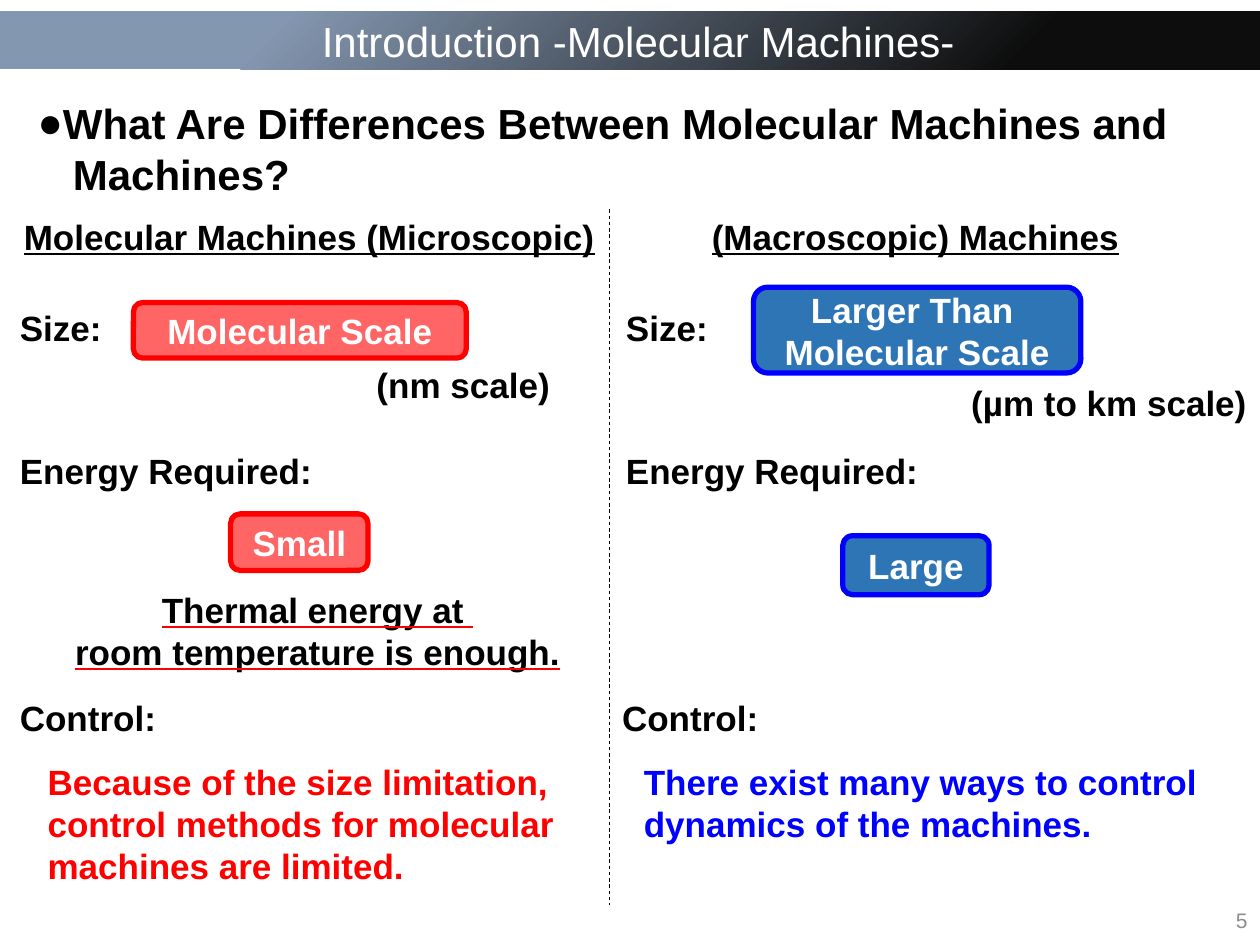
from dataclasses import dataclass

from lxml.etree import SubElement
from pptx import Presentation
from pptx.dml.color import RGBColor
from pptx.enum.dml import MSO_LINE
from pptx.enum.shapes import MSO_CONNECTOR, MSO_SHAPE
from pptx.enum.text import MSO_ANCHOR, PP_ALIGN
from pptx.oxml.ns import qn
from pptx.util import Cm, Pt

FONT = "Arial"
BLACK, WHITE, GREY = "000000", "FFFFFF", "8C8C8C"
RED, BLUE = "FF0000", "0000FF"
LABELS_TOP = {"Size:": 1.83, "Energy Required:": 4.72, "Control:": 9.7}


@dataclass
class Column:
    heading: str
    heading_box: tuple
    accent: str
    chip_fill: str
    chips: list
    scale: str
    scale_box: tuple
    control: str
    control_box: tuple
    control_label_left: float = 0


MICROSCOPIC = Column(
    "Molecular Machines (Microscopic)", (0.08, 0, 12.09, 1.12), RED, "FF6565",
    [(["Molecular Scale"], (2.54, 1.88, 6.71, 1.12)),
     (["Small"], (4.5, 6.14, 2.77, 1.14))],
    "(nm scale)", (7.19, 2.99, 4.04, 1.12),
    "Because of the size limitation, control methods for molecular machines are limited.",
    (0.56, 10.99, 12.65, 2.82))

MACROSCOPIC = Column(
    "(Macroscopic) Machines", (1.73, 0, 10.26, 1.12), BLUE, "2E75B6",
    [(["Larger Than ", "Molecular Scale"], (2.82, 1.57, 6.6, 1.73)),
     (["Large"], (4.62, 6.58, 2.95, 1.19))],
    "(µm to km scale)", (6.96, 3.35, 6.1, 1.12),
    "There exist many ways to control dynamics of the machines.",
    (0.36, 10.99, 12.65, 1.96), -0.08)


def color(value):
    return RGBColor.from_string(value)


def place(origin, box):
    left, top, width, height = box
    return Cm(origin[0] + left), Cm(origin[1] + top), Cm(width), Cm(height)


def write(frame, lines, size=20, fill=BLACK, bold=True, underline=None, align=PP_ALIGN.LEFT):
    for index, line in enumerate(lines):
        para = frame.paragraphs[0] if index == 0 else frame.add_paragraph()
        para.text = line
        para.alignment = align
        font = para.font
        font.name, font.size, font.bold, font.underline = FONT, Pt(size), bold, underline
        font.color.rgb = color(fill)


def add_text(page, origin, box, lines, wrap=True, **style):
    frame = page.shapes.add_textbox(*place(origin, box)).text_frame
    frame.word_wrap = wrap
    write(frame, lines, **style)
    return frame


def add_title_bar(page, box):
    bar = page.shapes.add_shape(MSO_SHAPE.RECTANGLE, *place((0, 0), box))
    bar.shadow.inherit = False
    bar.line.fill.background()
    bar.fill.gradient()
    bar.fill.gradient_angle = 315
    stops = [(0.22, "8497B0"), (0.81, "0D0D0D")]
    for stop, (position, value) in zip(bar.fill.gradient_stops, stops):
        stop.position = position
        stop.color.rgb = color(value)
    frame = bar.text_frame
    frame.margin_left, frame.margin_top, frame.margin_bottom = Cm(0.6), 0, 0
    frame.vertical_anchor = MSO_ANCHOR.MIDDLE
    write(frame, ["Introduction -Molecular Machines-"], 24, WHITE, False, align=PP_ALIGN.CENTER)


def add_question(page, box):
    frame = add_text(page, (0, 0), box, [])
    lines = ["What Are Differences Between Molecular Machines and", "Machines?"]
    first = frame.paragraphs[0]._p.get_or_add_pPr()
    first.set("marL", "0")
    first.set("indent", "0")
    SubElement(first, qn("a:buFont"), typeface=FONT)
    SubElement(first, qn("a:buChar"), char="●")
    write(frame, lines, 24)
    frame.paragraphs[1]._p.get_or_add_pPr().set("marL", str(Cm(0.71)))


def add_chip(page, origin, box, lines, fill, outline):
    chip = page.shapes.add_shape(MSO_SHAPE.ROUNDED_RECTANGLE, *place(origin, box))
    chip.shadow.inherit = False
    chip.fill.solid()
    chip.fill.fore_color.rgb = color(fill)
    chip.line.color.rgb = color(outline)
    chip.line.width = Pt(3)
    chip.text_frame.vertical_anchor = MSO_ANCHOR.MIDDLE
    write(chip.text_frame, lines, fill=WHITE, align=PP_ALIGN.CENTER)


def add_column(page, origin, column):
    add_text(page, origin, column.heading_box, [column.heading], False, underline=True)
    for label, top in LABELS_TOP.items():
        left = column.control_label_left if label == "Control:" else 0
        add_text(page, origin, (left, top, 6.45, 1.12), [label], False)
    for lines, box in column.chips:
        add_chip(page, origin, box, lines, column.chip_fill, column.accent)
    add_text(page, origin, column.scale_box, [column.scale], False)
    add_text(page, origin, column.control_box, [column.control], fill=column.accent)


def add_energy_note(page, origin, box):
    lines = ["Thermal energy at ", "room temperature is enough."]
    frame = add_text(page, origin, box, lines, underline=True, align=PP_ALIGN.CENTER)
    for para in frame.paragraphs:
        for span in para.runs:
            span.font.underline = True
            line_fill = SubElement(span._r.get_or_add_rPr(), qn("a:uFill"))
            solid = SubElement(line_fill, qn("a:solidFill"))
            SubElement(solid, qn("a:srgbClr"), val=RED)


def add_divider(page, left, top, bottom):
    divider = page.shapes.add_connector(
        MSO_CONNECTOR.STRAIGHT, Cm(left), Cm(top), Cm(left), Cm(bottom))
    divider.line.color.rgb = color(BLACK)
    divider.line.width = Pt(0.5)
    divider.line.dash_style = MSO_LINE.DASH
    SubElement(divider._element.spPr, qn("a:effectLst"))


def add_page_number(page, box):
    frame = add_text(page, (0, 0), box, ["5"], size=12, fill=GREY, bold=False,
                     align=PP_ALIGN.RIGHT)
    frame.vertical_anchor = MSO_ANCHOR.MIDDLE


def main():
    deck = Presentation()
    deck.slide_width, deck.slide_height = Cm(25.4), Cm(19.05)
    page = deck.slides.add_slide(deck.slide_layouts[6])
    add_title_bar(page, (-0.02, 0.23, 25.42, 1.17))
    add_question(page, (0.51, 1.85, 24.46, 2.31))
    add_column(page, (0.15, 4.22), MICROSCOPIC)
    add_energy_note(page, (0.15, 4.22), (-0.07, 7.51, 12.65, 1.96))
    add_column(page, (12.37, 4.22), MACROSCOPIC)
    add_divider(page, 12.29, 4.22, 18.24)
    add_page_number(page, (19.69, 18.03, 5.71, 1.02))
    deck.save("out.pptx")


if __name__ == "__main__":
    main()
